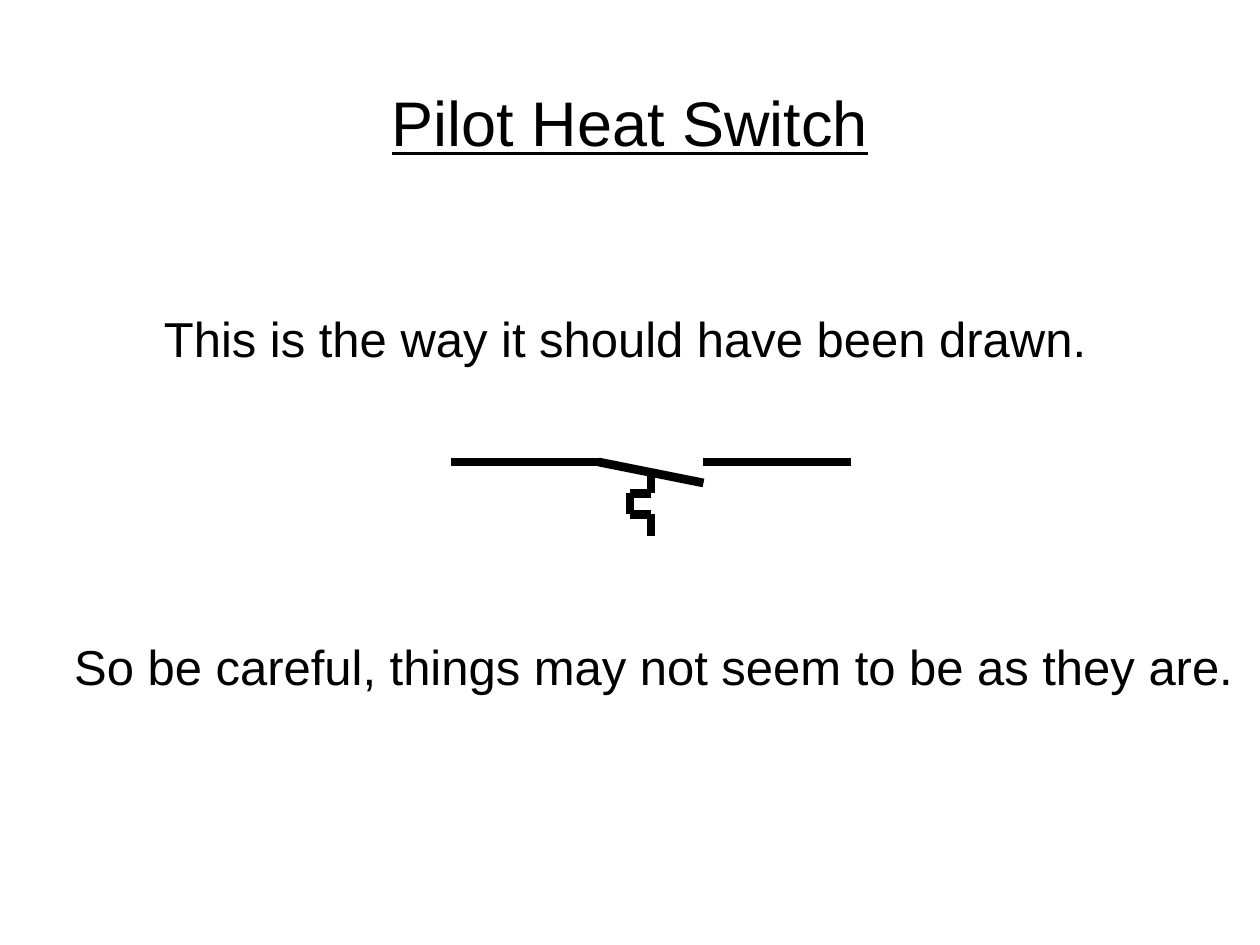
from dataclasses import dataclass
from itertools import pairwise

from lxml import etree
from pptx import Presentation
from pptx import util as u
from pptx.dml.color import RGBColor
from pptx.enum import shapes, text
from pptx.oxml.ns import qn


@dataclass(frozen=True)
class Theme:
    font: str = "Arial"
    ink: RGBColor = RGBColor(0, 0, 0)
    paper: RGBColor = RGBColor(255, 255, 255)
    title_size: int = 36
    body_size: int = 28
    wire_width: int = 5
    loose_spacing: float = 1.5


@dataclass(frozen=True)
class Box:
    left: int
    top: int
    width: int
    height: int


THEME = Theme()
SLIDE_WIDTH, SLIDE_HEIGHT = u.Inches(10), u.Inches(7.5)

# Wires of the switch, as (column, row) points on a 38 by 7 grid.
SWITCH_COLUMNS, SWITCH_ROWS = 38, 7
FEED_AND_BLADE = [(0, 0), (14, 0), (24, 2)]
CONTACT = [(24, 0), (38, 0)]
HEAT_ELEMENT = [(19, 1), (19, 3), (17, 3), (17, 5), (19, 5), (19, 7)]


def share_box(left, top, width, height):
    """Box from shares of the slide's size."""
    return Box(round(left * SLIDE_WIDTH), round(top * SLIDE_HEIGHT),
               round(width * SLIDE_WIDTH), round(height * SLIDE_HEIGHT))


def place(shape, box):
    shape.left, shape.top = box.left, box.top
    shape.width, shape.height = box.width, box.height


def write(frame, words, size, align, spacing=1.0, underline=False):
    para = frame.paragraphs[0]
    para.alignment = align
    para.line_spacing = spacing
    span = para.add_run()
    span.text = words
    span.font.name = THEME.font
    span.font.size = u.Pt(size)
    span.font.color.rgb = THEME.ink
    span.font.underline = underline


def add_title(page, box, words):
    title = page.shapes.title
    place(title, box)
    title.text_frame.vertical_anchor = text.MSO_ANCHOR.MIDDLE
    write(title.text_frame, words, THEME.title_size, text.PP_ALIGN.CENTER,
          THEME.loose_spacing, underline=True)


def add_statement(page, box, words, align, spacing=1.0, wrap=True):
    statement = page.shapes.add_textbox(box.left, box.top, box.width, box.height)
    statement.text_frame.word_wrap = wrap
    write(statement.text_frame, words, THEME.body_size, align, spacing)


def add_wire(page, start, end):
    wire = page.shapes.add_connector(shapes.MSO_CONNECTOR.STRAIGHT, *start, *end)
    wire.line.color.rgb = THEME.ink
    wire.line.width = u.Pt(THEME.wire_width)
    etree.SubElement(wire._element.spPr, qn("a:effectLst"))


def add_heat_switch(page, box):
    def spot(column, row):
        return (box.left + round(box.width * column / SWITCH_COLUMNS),
                box.top + round(box.height * row / SWITCH_ROWS))

    for route in (FEED_AND_BLADE, CONTACT, HEAT_ELEMENT):
        for start, end in pairwise(route):
            add_wire(page, spot(*start), spot(*end))


def main():
    deck = Presentation()
    deck.slide_width, deck.slide_height = SLIDE_WIDTH, SLIDE_HEIGHT
    page = deck.slides.add_slide(deck.slide_layouts.get_by_name("Title Only"))
    page.background.fill.solid()
    page.background.fill.fore_color.rgb = THEME.paper

    add_title(page, share_box(0.05, 0.04, 0.9, 0.137), "Pilot Heat Switch")
    add_statement(page, share_box(0.05, 0.289, 0.892, 0.296),
                  "This is the way it should have been drawn.",
                  text.PP_ALIGN.CENTER, THEME.loose_spacing)
    add_heat_switch(page, share_box(43 / 120, 44 / 90,
                                    SWITCH_COLUMNS / 120, SWITCH_ROWS / 90))
    add_statement(page, share_box(0.049, 2 / 3, 0.951, 0.076),
                  "So be careful, things may not seem to be as they are.",
                  text.PP_ALIGN.LEFT, wrap=False)
    deck.save("out.pptx")


if __name__ == "__main__":
    main()
